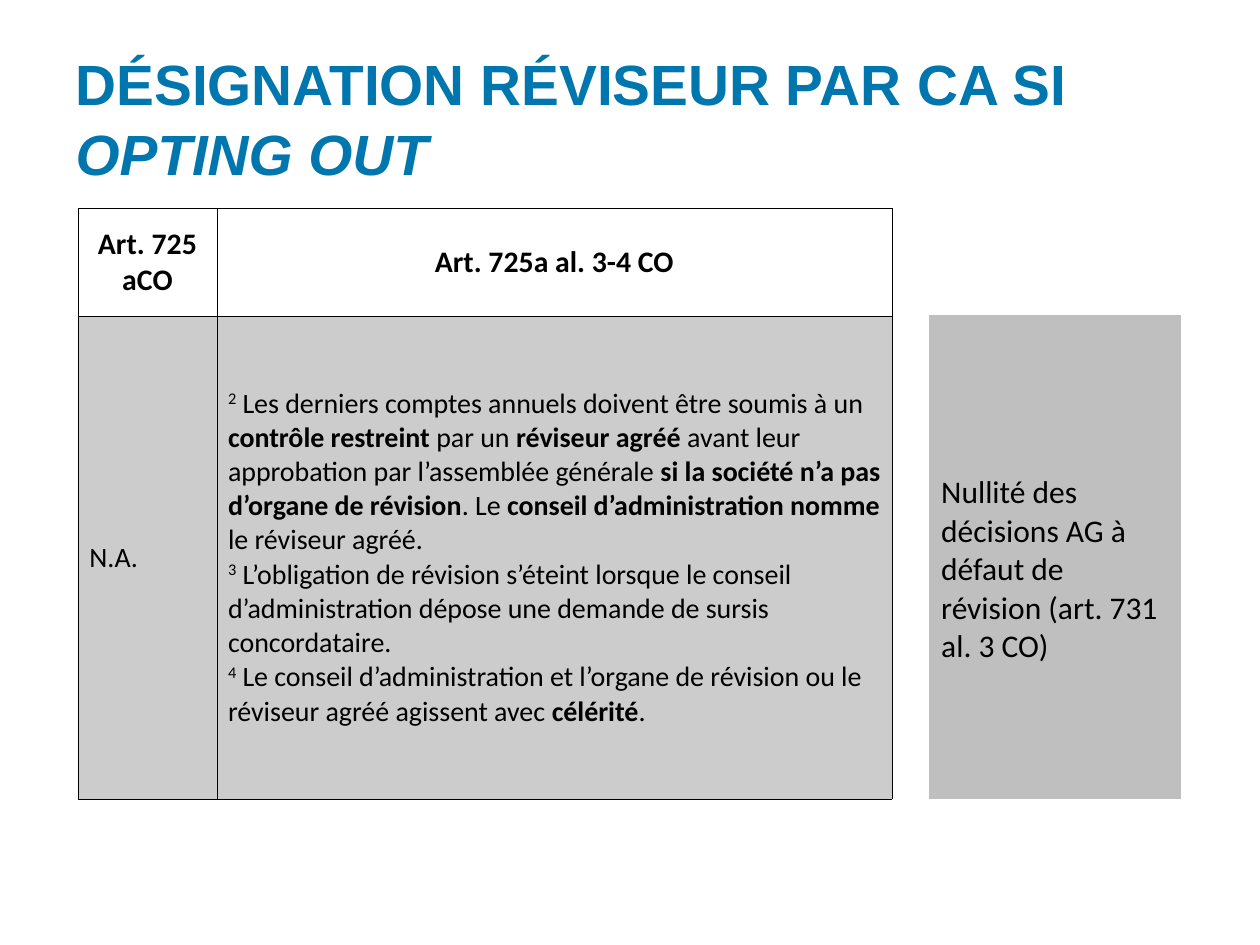
from lxml import etree
from pptx import Presentation
from pptx.dml.color import RGBColor
from pptx.enum.text import MSO_ANCHOR, PP_ALIGN
from pptx.oxml import parse_xml
from pptx.oxml.ns import nsdecls, qn
from pptx.util import Inches, Pt

BLUE = RGBColor(0x00, 0x76, 0xAF)
BLACK = RGBColor(0x00, 0x00, 0x00)
GREY = RGBColor(0xBF, 0xBF, 0xBF)
MIDDLE, TOP = MSO_ANCHOR.MIDDLE, MSO_ANCHOR.TOP
LEFT, CENTER = PP_ALIGN.LEFT, PP_ALIGN.CENTER

TITLE = [("DÉSIGNATION RÉVISEUR PAR CA SI ", ""), ("OPTING OUT", "i")]
HEADS = ["Art. 725 aCO", "Art. 725a al. 3-4 CO"]
LAW = [
    [
        ("2", "sup"),
        (" Les derniers comptes annuels doivent être soumis à un ", ""),
        ("contrôle restreint ", "b"),
        ("par un ", ""),
        ("réviseur agréé ", "b"),
        ("avant leur approbation par l’assemblée générale ", ""),
        ("si la société n’a pas d’organe de révision", "b"),
        (". Le ", ""),
        ("conseil d’administration nomme ", "b"),
        ("le réviseur agréé.", ""),
    ],
    [
        ("3", "sup"),
        (" L’obligation de révision s’éteint lorsque le conseil "
         "d’administration dépose une demande de sursis concordataire.", ""),
    ],
    [
        ("4", "sup"),
        (" Le conseil d’administration et l’organe de révision ou le "
         "réviseur agréé agissent avec ", ""),
        ("célérité", "b"),
        (".", ""),
    ],
]
NOTE = "Nullité des décisions AG à défaut de révision (art. 731 al. 3 CO)"

COLS, ROWS = [1.1, 5.36], [0.86, 3.83]
SIDE_COLS, SIDE_ROWS = [2.01], [3.86]


def add_run(para, text, mark, size, face, color):
    run = para.add_run()
    run.text = text
    font = run.font
    font.size, font.name = Pt(size), face
    font.color.rgb = color
    font.bold, font.italic = "b" in mark, mark == "i"
    if mark == "sup":
        font._element.set("baseline", "30000")


def add_grid(slide, left, top, cols, rows):
    frame = slide.shapes.add_table(
        len(rows), len(cols), Inches(left), Inches(top),
        Inches(sum(cols)), Inches(sum(rows)))
    table = frame.table
    table.first_row = table.horz_banding = False
    for col, width in zip(table.columns, cols):
        col.width = Inches(width)
    for row, height in zip(table.rows, rows):
        row.height = Inches(height)
    return table


def fill_cell(cell, paras, size, align=LEFT, anchor=MIDDLE):
    cell.vertical_anchor = anchor
    frame = cell.text_frame
    for i, runs in enumerate(paras):
        para = frame.add_paragraph() if i else frame.paragraphs[0]
        para.alignment = align
        for text, mark in runs:
            add_run(para, text, mark, size, "Calibri", BLACK)


def add_edges(cell):
    props = cell._tc.get_or_add_tcPr()
    for side in "LRTB":
        props.append(parse_xml(
            f'<a:ln{side} {nsdecls("a")} w="{Pt(0.25)}"><a:solidFill>'
            f'<a:srgbClr val="{BLACK}"/></a:solidFill></a:ln{side}>'))


def tint(cell, share):
    cell.fill.solid()
    cell.fill.fore_color.rgb = BLACK
    color = cell._tc.tcPr.find(qn("a:solidFill"))[0]
    etree.SubElement(color, qn("a:alpha")).set("val", str(share * 1000))


def main():
    deck = Presentation()
    deck.slide_width, deck.slide_height = Inches(10), Inches(7.5)
    slide = deck.slides.add_slide(deck.slide_layouts[5])

    title = slide.shapes.title
    title.left, title.top = Inches(0.5), Inches(0.3)
    title.width, title.height = Inches(9), Inches(1.25)
    title.text_frame.vertical_anchor = MIDDLE
    para = title.text_frame.paragraphs[0]
    para.alignment, para.line_spacing = LEFT, 1.04
    for text, mark in TITLE:
        add_run(para, text, mark, 32.4, "Arial", BLUE)
    for run in para.runs:
        run.font.bold = True

    table = add_grid(slide, 0.62, 1.65, COLS, ROWS)
    for cell in table.iter_cells():
        add_edges(cell)
        cell.margin_left = cell.margin_right = Inches(0.09)
        cell.margin_top = cell.margin_bottom = Inches(0.04)
    for i, (head, body) in enumerate(zip(HEADS, [[[("N.A.", "")]], LAW])):
        top, low = table.cell(0, i), table.cell(1, i)
        fill_cell(top, [[(head, "b")]], 17, CENTER)
        top.fill.background()
        fill_cell(low, body, 16)
        tint(low, 20)

    side = add_grid(slide, 7.37, 2.49, SIDE_COLS, SIDE_ROWS).cell(0, 0)
    fill_cell(side, [[(NOTE, "")]], 18, anchor=TOP)
    side.margin_top = Inches(1.27)
    side.fill.solid()
    side.fill.fore_color.rgb = GREY

    deck.save("out.pptx")


if __name__ == "__main__":
    main()
